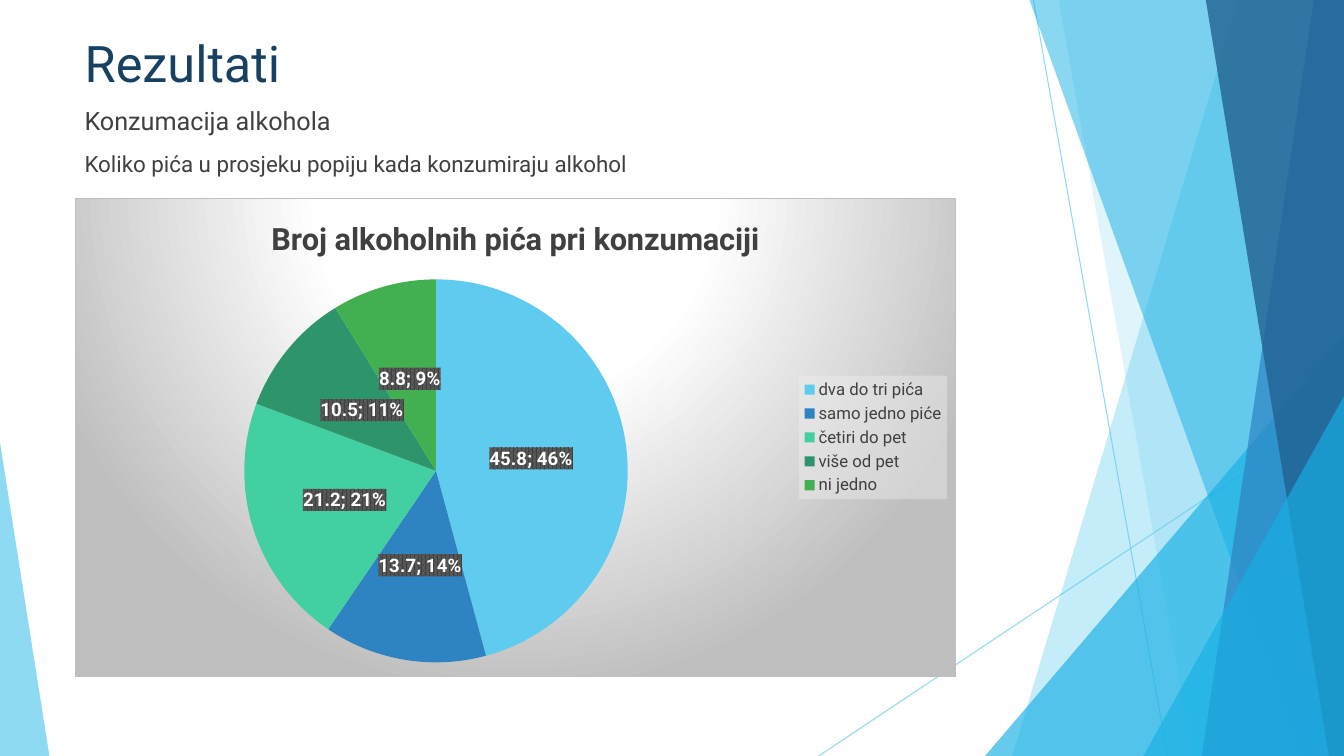
from lxml import etree
from pptx import Presentation
from pptx.chart.data import CategoryChartData
from pptx.dml.color import RGBColor
from pptx.enum.chart import XL_CHART_TYPE, XL_LABEL_POSITION, XL_LEGEND_POSITION
from pptx.enum.shapes import MSO_CONNECTOR, MSO_SHAPE
from pptx.enum.text import MSO_ANCHOR, PP_ALIGN
from pptx.oxml import parse_xml
from pptx.oxml.ns import nsdecls, qn
from pptx.util import Inches, Pt

SKY, AZURE, BLUE, NAVY = "5FCBEF", "17B0E4", "2E83C3", "226292"
INK, WHITE, GREY = "404040", "FFFFFF", "BFBFBF"
W, H = 13.33, 7.5

ANSWERS = [
    ("dva do tri pića", 45.8, SKY),
    ("samo jedno piće", 13.7, BLUE),
    ("četiri do pet", 21.2, "42D0A2"),
    ("više od pet", 10.5, "2E946B"),
    ("ni jedno", 8.8, "42B051"),
]


def rgb(value):
    return RGBColor.from_string(value)


def set_alpha(fill_owner, percent):
    """Make the solid fill found below an element partly transparent."""
    color = fill_owner.find(".//" + qn("a:srgbClr"))
    etree.SubElement(color, qn("a:alpha")).set("val", str(percent * 1000))


def chart_props(content):
    """Return a c:spPr element around DrawingML content."""
    return parse_xml(f'<c:spPr {nsdecls("c", "a")}>{content}</c:spPr>')


def color_xml(value, inner=""):
    return f'<a:srgbClr val="{value}">{inner}</a:srgbClr>'


class SlideBuilder:
    font_name = "Roboto"

    def __init__(self, slide):
        self.slide = slide
        self.shapes = slide.shapes

    def style(self, font, size, color, bold=False):
        font.name, font.size, font.bold = self.font_name, Pt(size), bold
        font.color.rgb = rgb(color)

    def line(self, x1, y1, x2, y2):
        cn = self.shapes.add_connector(
            MSO_CONNECTOR.STRAIGHT, Inches(x1), Inches(y1), Inches(x2), Inches(y2))
        cn.line.color.rgb = rgb(SKY)
        cn.line.width = Pt(0.75)
        sp_pr = cn._element.spPr
        set_alpha(sp_pr, 70)
        etree.SubElement(sp_pr, qn("a:effectLst"))

    def paint(self, sp, color, alpha):
        sp.shadow.inherit = False
        sp.line.fill.background()
        sp.fill.solid()
        sp.fill.fore_color.rgb = rgb(color)
        set_alpha(sp._element.spPr, alpha)

    def band(self, top_x, bottom_x, color, alpha):
        """Fill from a slanted left edge to the right edge of the slide."""
        builder = self.shapes.build_freeform(
            Inches(top_x), 0, scale=1)
        builder.add_line_segments(
            [(Inches(x), Inches(y)) for x, y in ((W, 0), (W, H), (bottom_x, H))])
        self.paint(builder.convert_to_shape(), color, alpha)

    def triangle(self, left, top, width, apex, color, alpha):
        """Add a triangle that stands on the bottom edge of the slide."""
        sp = self.shapes.add_shape(
            MSO_SHAPE.ISOSCELES_TRIANGLE,
            Inches(left), Inches(top), Inches(width), Inches(H - top))
        sp.adjustments[0] = apex
        self.paint(sp, color, alpha)

    def title(self, text, left, top, width, height):
        sp = self.shapes.title
        sp.left, sp.top = Inches(left), Inches(top)
        sp.width, sp.height = Inches(width), Inches(height)
        tf = sp.text_frame
        tf.text = text
        tf.vertical_anchor = MSO_ANCHOR.MIDDLE
        p = tf.paragraphs[0]
        p.alignment = PP_ALIGN.LEFT
        self.style(p.font, 36, "174162")

    def text(self, lines, left, top, width, height):
        tf = self.shapes.add_textbox(
            Inches(left), Inches(top), Inches(width), Inches(height)).text_frame
        tf.word_wrap = True
        for i, (text, size) in enumerate(lines):
            p = tf.add_paragraph() if i else tf.paragraphs[0]
            p.text = text
            p.space_before = Pt(10)
            self.style(p.font, size, INK)

    def pie(self, title, answers, left, top, width, height):
        data = CategoryChartData()
        data.categories = [name for name, _, _ in answers]
        data.add_series("Series 1", [value for _, value, _ in answers])
        chart = self.shapes.add_chart(
            XL_CHART_TYPE.PIE, Inches(left), Inches(top),
            Inches(width), Inches(height), data).chart
        self.style(chart.font, 10, "000000")

        chart.has_title = True
        p = chart.chart_title.text_frame.paragraphs[0]
        p.text = title
        self.style(p.font, 22, INK, bold=True)

        chart.has_legend = True
        chart.legend.position = XL_LEGEND_POSITION.RIGHT
        chart.legend.include_in_layout = False
        self.style(chart.legend.font, 12, INK)

        plot = chart.plots[0]
        plot.vary_by_categories = True
        series = plot.series[0]
        for i, (_, _, color) in enumerate(answers):
            fill = series.points[i].format.fill
            fill.solid()
            fill.fore_color.rgb = rgb(color)

        labels = series.data_labels
        labels.show_value = labels.show_percentage = True
        labels.position = XL_LABEL_POSITION.CENTER
        self.style(labels.font, 13.3, WHITE, bold=True)
        self.decorate(chart.element)

    def decorate(self, space):
        """Add the gradient, label and legend backgrounds and the pie's place."""
        stops = "".join(
            f'<a:gs pos="{pos * 1000}">{color_xml(color)}</a:gs>'
            for pos, color in ((0, WHITE), (39, WHITE), (100, GREY)))
        space.find(qn("c:chart")).addnext(chart_props(
            f'<a:gradFill><a:gsLst>{stops}</a:gsLst><a:path path="circle">'
            '<a:fillToRect l="50000" t="-80000" r="50000" b="180000"/></a:path>'
            f'</a:gradFill><a:ln w="9525"><a:solidFill>{color_xml(GREY)}'
            '</a:solidFill></a:ln>'))

        labels = space.find(".//" + qn("c:dLbls"))
        labels.find(qn("c:txPr")).addprevious(chart_props(
            f'<a:pattFill prst="pct75"><a:fgClr>{color_xml(INK)}</a:fgClr>'
            f'<a:bgClr>{color_xml("595959")}</a:bgClr></a:pattFill>'))
        separator = parse_xml(f'<c:separator {nsdecls("c")}>; </c:separator>')
        labels.find(qn("c:showPercent")).addnext(separator)
        bubble = labels.find(qn("c:showBubbleSize"))
        if bubble is not None:
            bubble.addnext(separator)

        legend = space.find(".//" + qn("c:legend"))
        legend.find(qn("c:txPr")).addprevious(chart_props(
            f'<a:solidFill>{color_xml("F2F2F2", "<a:alpha val=%r/>" % "39000")}'
            '</a:solidFill>'))

        area = space.find(".//" + qn("c:plotArea"))
        for old in area.findall(qn("c:layout")):
            area.remove(old)
        sizes = "".join(f'<c:{key} val="{val}"/>' for key, val in (
            ("layoutTarget", "inner"), ("xMode", "edge"), ("yMode", "edge"),
            ("x", 0.19), ("y", 0.17), ("w", 0.44), ("h", 0.8)))
        area.insert(0, parse_xml(
            f'<c:layout {nsdecls("c")}><c:manualLayout>{sizes}'
            '</c:manualLayout></c:layout>'))


def main():
    prs = Presentation()
    prs.slide_width, prs.slide_height = Inches(W), Inches(H)
    s = SlideBuilder(prs.slides.add_slide(prs.slide_layouts[5]))

    s.line(10.25, 0, 11.58, H)
    s.line(W, 4.03, 8.12, H)
    s.band(12.28, 10.04, SKY, 36)
    s.band(10.5, 11.83, SKY, 20)
    s.triangle(9.77, 3.33, 3.56, 1, AZURE, 66)
    s.band(10.21, 12.91, AZURE, 50)
    s.band(13.03, 11.92, BLUE, 70)
    s.band(11.96, 13.18, NAVY, 80)
    s.triangle(11.34, 3.93, 1.99, 1, AZURE, 66)
    s.triangle(0, 4.39, 0.49, 0, SKY, 70)

    s.title("Rezultati", 0.74, 0.24, 9.4, 0.76)
    s.text([("Konzumacija alkohola", 18),
            ("Koliko pića u prosjeku popiju kada konzumiraju alkohol", 16)],
           0.74, 1, 9.4, 0.9)
    s.pie("Broj alkoholnih pića pri konzumaciji", ANSWERS, 0.74, 1.96, 8.74, 4.76)
    prs.save("out.pptx")


if __name__ == "__main__":
    main()
